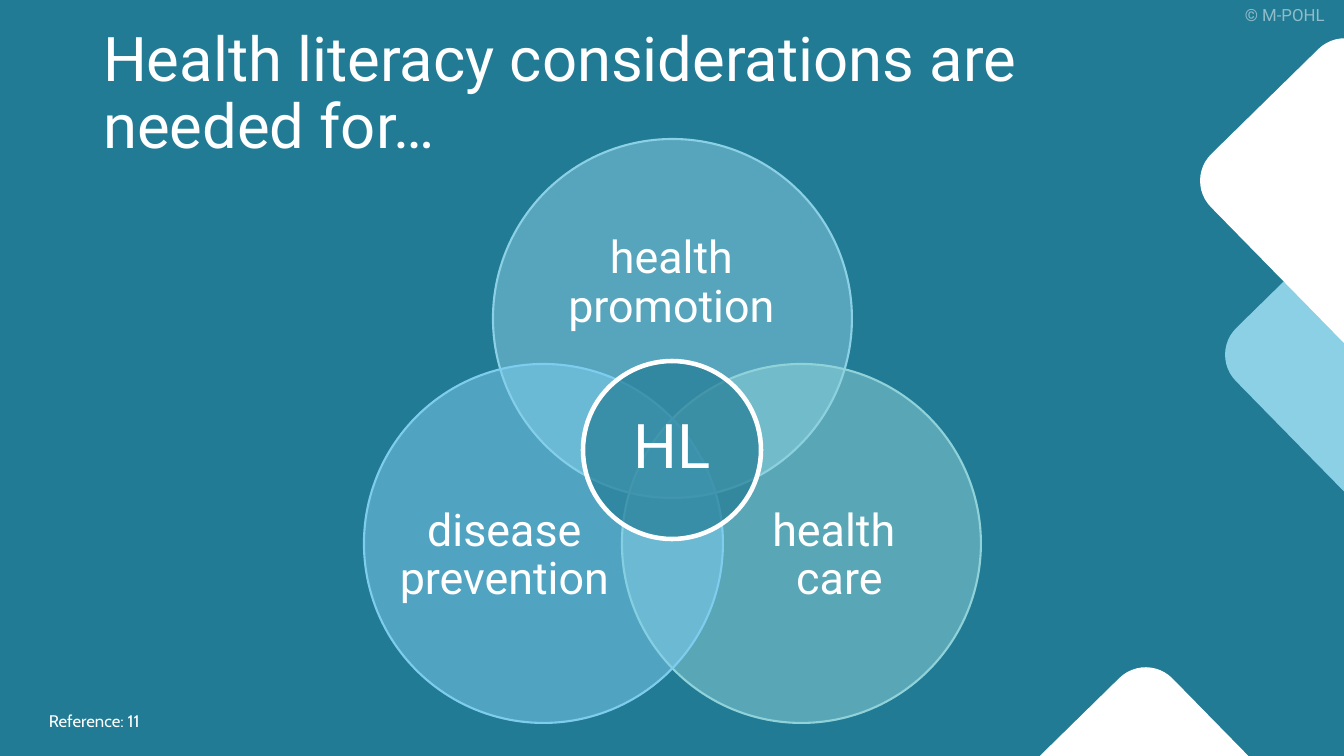
from lxml import etree
from pptx import Presentation
from pptx import util as u
from pptx.dml.color import RGBColor
from pptx.enum import shapes, text
from pptx.oxml.ns import qn

PX = 12192000 / 1344
KIND = shapes.MSO_SHAPE
ALIGN = text.PP_ALIGN
ANCHOR = text.MSO_ANCHOR


def paint(fill, colour, opacity=100):
    fill.solid()
    fill.fore_color.rgb = RGBColor.from_string(colour)
    if opacity < 100:
        tint = fill._xPr.find(qn("a:solidFill"))[0]
        etree.SubElement(tint, qn("a:alpha"), val=str(opacity * 1000))


def write(box, words, size, font="Roboto", opacity=100, frame=None, para=None):
    for name, value in {"word_wrap": True, **(frame or {})}.items():
        setattr(box.text_frame, name, value)
    line = box.text_frame.paragraphs[0]
    for name, value in (para or {}).items():
        setattr(line, name, value)
    for index, part in enumerate(words.split("\n")):
        if index:
            line.add_line_break()
        span = line.add_run()
        span.text = part
        for name, value in {"name": font, "size": u.Pt(size)}.items():
            setattr(span.font, name, value)
        paint(span.font.fill, "FFFFFF", opacity)


deck = Presentation()
deck.slide_width, deck.slide_height = round(1344 * PX), round(756 * PX)
page = deck.slides.add_slide(deck.slide_layouts[5])
paint(page.background.fill, "227B94")

title = page.shapes.title
title_place = {"left": 93, "top": 22, "width": 1159, "height": 146}
for name, value in title_place.items():
    setattr(title, name, round(value * PX))
write(title, "Health literacy considerations are \nneeded for…", 44,
      frame={"vertical_anchor": ANCHOR.MIDDLE, "auto_size": text.MSO_AUTO_SIZE.NONE},
      para={"alignment": ALIGN.LEFT, "line_spacing": 0.9})

figures = [
    (KIND.ROUNDED_RECTANGLE, 1239, 284, 339, 225, "8BD0E4", 100, None, 0),
    (KIND.ROUNDED_RECTANGLE, 1214, 110, 339, 225, "FFFFFF", 100, None, 0),
    (KIND.ROUNDED_RECTANGLE, 1015, 739, 339, 225, "FFFFFF", 100, None, 0),
    (KIND.OVAL, 493, 139, 359, 359, "8BD0E4", 50, "8BD0E4", 1.5),
    (KIND.OVAL, 622, 364, 359, 359, "8FD2D9", 50, "8FD2D9", 1.5),
    (KIND.OVAL, 364, 364, 359, 359, "7FCDEE", 50, "7FCDEE", 1.5),
    (KIND.FLOWCHART_CONNECTOR, 583, 361, 178, 178, "227B94", 68, "FFFFFF", 3.25),
]
for kind, left, top, width, height, colour, opacity, edge, weight in figures:
    figure = page.shapes.add_shape(kind, *(round(n * PX) for n in (left, top, width, height)))
    figure.shadow.inherit = False
    paint(figure.fill, colour, opacity)
    if edge:
        paint(figure.line.fill, edge)
        figure.line.width = u.Pt(weight)
    else:
        figure.line.fill.background()
    if kind == KIND.ROUNDED_RECTANGLE:
        figure.rotation = 225.6

middle = {"vertical_anchor": ANCHOR.MIDDLE}
label = {
    "size": 32,
    "frame": {**middle, "margin_left": 0, "margin_top": 0, "margin_right": 0, "margin_bottom": 0},
    "para": {"alignment": ALIGN.CENTER, "line_spacing": 0.9},
}
texts = [
    ("health promotion", (540, 203, 263, 161), label),
    ("health \ncare", (732, 457, 215, 198), label),
    ("disease\nprevention", (397, 457, 215, 198), label),
    ("HL", (624, 402, 100, 85), {"size": 44}),
    ("© M-POHL", (1235, 0, 127, 54), {"size": 12, "opacity": 50}),
    ("Reference: 11", (39, 701, 454, 40), {"size": 12, "font": "Cabin", "frame": middle}),
]
for words, place, look in texts:
    box = page.shapes.add_textbox(*(round(n * PX) for n in place))
    write(box, words, **look)

deck.save("out.pptx")
